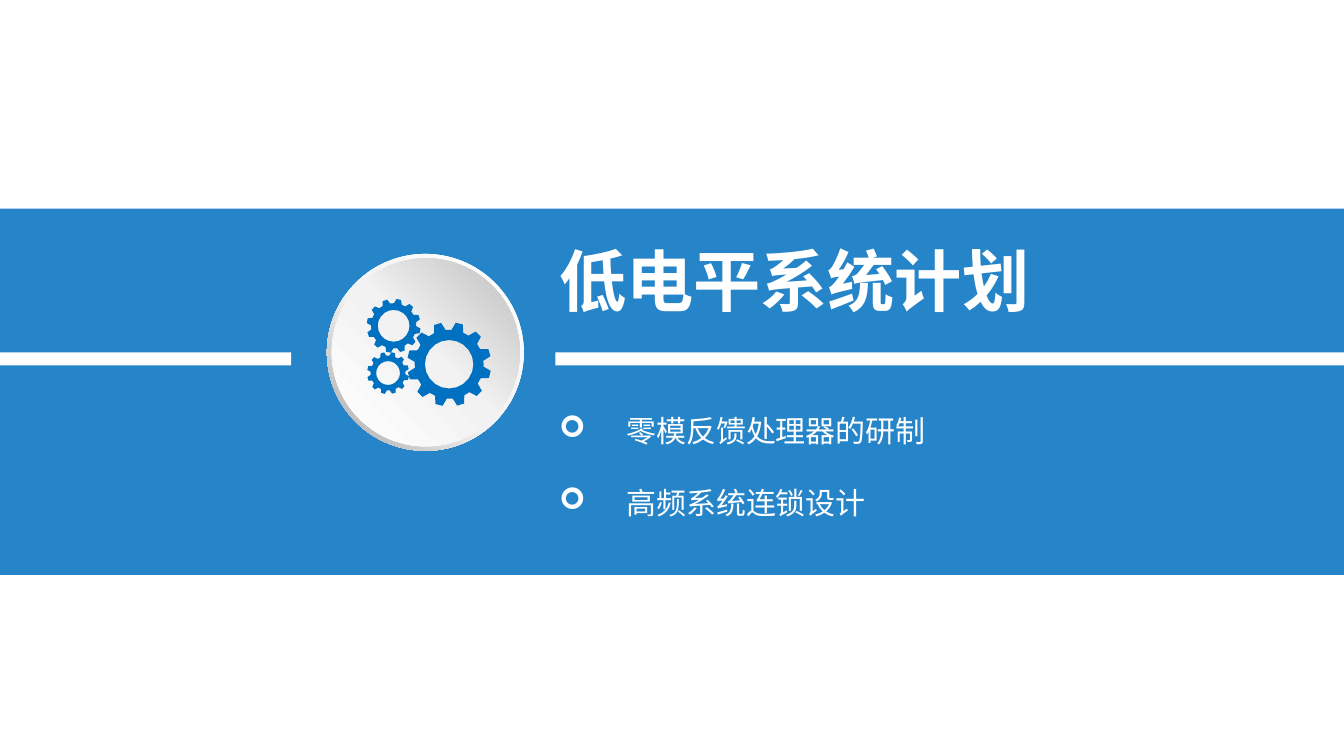
from copy import deepcopy
from math import cos, radians, sin

from pptx import Presentation
from pptx.dml.color import RGBColor
from pptx.enum.shapes import MSO_SHAPE
from pptx.enum.text import MSO_AUTO_SIZE
from pptx.oxml.ns import qn
from pptx.util import Cm, Pt

RECT = MSO_SHAPE.RECTANGLE
OVAL = MSO_SHAPE.OVAL
RING = MSO_SHAPE.DONUT
GROW = MSO_AUTO_SIZE.SHAPE_TO_FIT_TEXT

BLUE = RGBColor(0x00, 0x70, 0xC0)
WHITE = RGBColor(0xFF, 0xFF, 0xFF)
PALE = RGBColor(0xF2, 0xF2, 0xF2)
SILVER = RGBColor(0xBF, 0xBF, 0xBF)
GRAY = RGBColor(0xA6, 0xA6, 0xA6)

FONT = "Noto Sans CJK SC"
WIDTH, HEIGHT = 33.87, 19.05
TEXT_X = 13.84
INDENT = 1.7
ITEMS = ["零模反馈处理器的研制", "高频系统连锁设计"]


def add_node(owner, tag, **values):
    owner.append(owner.makeelement(qn(tag), values))


def add_form(shapes, kind, x, y, w, h):
    form = shapes.add_shape(kind, Cm(x), Cm(y), Cm(w), Cm(h))
    form.shadow.inherit = False
    form.line.fill.background()
    return form


def add_band(shapes, x, y, w, h, color, alpha=100):
    band = add_form(shapes, RECT, x, y, w, h)
    band.fill.solid()
    band.fill.fore_color.rgb = color
    if alpha < 100:
        tint = band._element.spPr.find(".//" + qn("a:srgbClr"))
        add_node(tint, "a:alpha", val=str(alpha * 1000))


def shade(form, angle, stops):
    form.fill.gradient()
    form.fill.gradient_angle = angle
    nodes = form._element.spPr.find(".//" + qn("a:gsLst"))
    nodes.append(deepcopy(nodes[0]))
    for stop, (place, color) in zip(form.fill.gradient_stops, stops):
        stop.position = place
        stop.color.rgb = color


def spot(x, y, reach, angle):
    turn = radians(angle)
    return Cm(x + reach * cos(turn)), Cm(y + reach * sin(turn))


def add_gear(shapes, x, y, tip, root, hole, phase):
    tooth = [(-10, root), (-5, tip), (5, tip), (10, root)]
    rim = [spot(x, y, reach, turn + phase + step)
           for turn in range(0, 360, 30) for step, reach in tooth]
    bore = [spot(x, y, hole, turn) for turn in range(0, 360, 18)]
    pen = shapes.build_freeform(*rim[0])
    pen.add_line_segments(rim[1:])
    pen.move_to(*bore[0])
    pen.add_line_segments(bore[1:])
    gear = pen.convert_to_shape()
    gear.shadow.inherit = False
    gear.fill.solid()
    gear.fill.fore_color.rgb = BLUE
    gear.line.fill.background()


def add_badge(slide):
    shapes = slide.shapes.add_group_shape().shapes
    ring = add_form(shapes, RING, 8.24, 6.4, 4.96, 4.96)
    ring.adjustments[0] = 0.05
    shade(ring, 225, [(0, WHITE), (0.55, PALE), (1, GRAY)])
    disc = add_form(shapes, OVAL, 8.36, 6.51, 4.74, 4.74)
    shade(disc, 45, [(0, WHITE), (0.51, PALE), (1, SILVER)])
    add_gear(shapes, 11.32, 9.18, 1.06, 0.87, 0.61, 14)
    add_gear(shapes, 9.92, 8.21, 0.68, 0.57, 0.4, 11)
    add_gear(shapes, 9.78, 9.4, 0.53, 0.44, 0.3, 14)


def add_text(slide, y, w, h, text, size, bold=False, mark=None):
    box = slide.shapes.add_textbox(Cm(TEXT_X), Cm(y), Cm(w), Cm(h))
    frame = box.text_frame
    frame.word_wrap = False
    frame.auto_size = GROW
    para = frame.paragraphs[0]
    run = para.add_run()
    run.text = text
    font = run.font
    font.name = FONT
    font.size = Pt(size)
    font.bold = bold
    font.color.rgb = WHITE
    add_node(run._r.get_or_add_rPr(), "a:ea", typeface=FONT)
    if mark:
        props = para._p.get_or_add_pPr()
        props.set("marL", str(Cm(INDENT)))
        props.set("indent", str(-Cm(INDENT)))
        add_node(props, "a:buFont", typeface="Wingdings")
        add_node(props, "a:buChar", char=mark)


def main():
    deck = Presentation()
    deck.slide_width = Cm(WIDTH)
    deck.slide_height = Cm(HEIGHT)
    slide = deck.slides.add_slide(deck.slide_layouts[6])
    add_band(slide.shapes, 0, 5.26, WIDTH, 9.23, BLUE, 85)
    add_badge(slide)
    for x, w in [(0, 7.34), (14, WIDTH - 14)]:
        add_band(slide.shapes, x, 8.88, w, 0.33, WHITE)
    add_text(slide, 5.91, 12.47, 2.31, "低电平系统计划", 48, bold=True)
    for i, (item, w) in enumerate(zip(ITEMS, [9.83, 8.31])):
        add_text(slide, 10.26 + 1.82 * i, w, 1.17, item, 21.4, mark="➢")
    deck.save("out.pptx")


if __name__ == "__main__":
    main()
